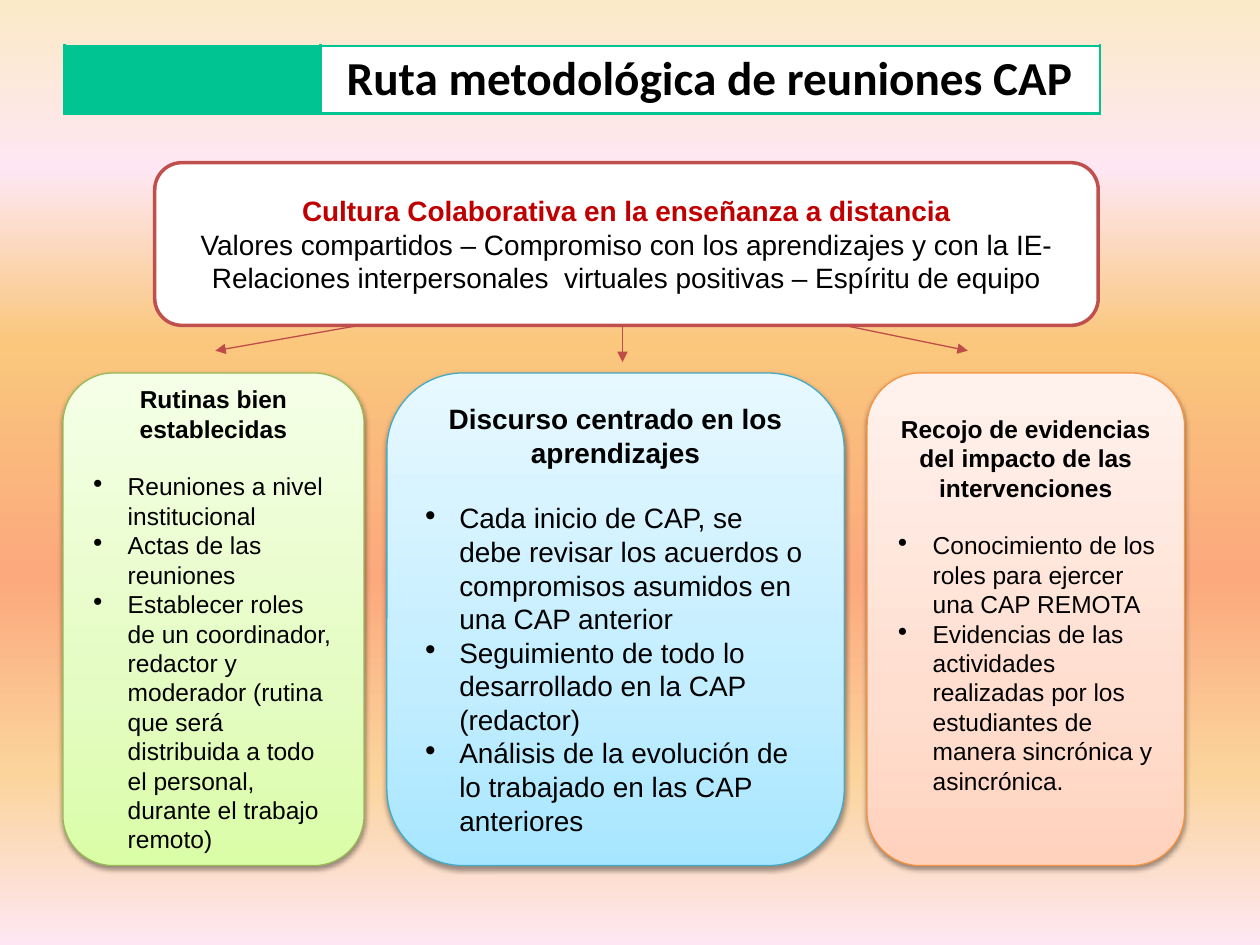
import lxml.etree
import pptx
import pptx.dml.color
import pptx.enum.shapes
import pptx.enum.text
import pptx.oxml.ns
import pptx.util

Cm, Pt = pptx.util.Cm, pptx.util.Pt
qn = pptx.oxml.ns.qn
Align = pptx.enum.text.PP_ALIGN
Middle = pptx.enum.text.MSO_ANCHOR.MIDDLE

COLORS = {
    "black": "000000", "white": "FFFFFF", "title": "00C491",
    "banner_line": "C0504D", "banner_text": "C00000", "arrow": "BF4C48",
}
BACKGROUND = [(0, "FBEAC7"), (18, "FEE7F2"), (36, "FAC77D"),
              (61, "FBA97D"), (82, "FBD49C"), (100, "FEE7F2")]
CARD_TOP, CARD_HEIGHT = 7.52, 9.93
CARDS = [
    {"left": 1.27, "width": 6.07, "size": 14, "line": "98B955",
     "stops": [(0, "DAFDA7"), (35, "E4FCC2"), (100, "F5FFE7")],
     "heading": "Rutinas bien establecidas",
     "items": ["Reuniones a nivel institucional", "Actas de las reuniones",
               "Establecer roles de un coordinador, redactor y moderador (rutina que será "
               "distribuida a todo el personal, durante el trabajo remoto)"]},
    {"left": 7.8, "width": 9.22, "size": 16, "line": "46AAC5",
     "stops": [(0, "A7E6FF"), (35, "C1EDFF"), (100, "E7F8FF")],
     "heading": "Discurso centrado en los aprendizajes",
     "items": ["Cada inicio de CAP, se debe revisar los acuerdos o compromisos asumidos "
               "en una CAP anterior",
               "Seguimiento de todo lo desarrollado en la CAP (redactor)",
               "Análisis de la evolución de lo trabajado en las CAP anteriores"]},
    {"left": 17.48, "width": 6.4, "size": 14, "line": "F69240", "bottom": 0.72,
     "stops": [(0, "FFD2BD"), (35, "FFDED0"), (100, "FFF2ED")],
     "heading": "Recojo de evidencias del impacto de las intervenciones",
     "items": ["Conocimiento de los roles para ejercer una CAP REMOTA",
               "Evidencias de las actividades realizadas por los estudiantes de manera "
               "sincrónica y asincrónica."]},
]


def rgb(value):
    return pptx.dml.color.RGBColor.from_string(value)


def add_element(parent, tag, **attributes):
    element = lxml.etree.SubElement(parent, qn(tag))
    for name, value in attributes.items():
        element.set(name, str(value))
    return element


def set_gradient(fill, owner, stops, angle):
    """Angle runs clockwise in degrees."""
    fill.gradient()
    gradient = owner.find(".//" + qn("a:gradFill"))
    stop_list = gradient.find(qn("a:gsLst"))
    for stop in list(stop_list):
        stop_list.remove(stop)
    for position, color in stops:
        stop = add_element(stop_list, "a:gs", pos=position * 1000)
        add_element(stop, "a:srgbClr", val=color)
    gradient.find(qn("a:lin")).set("ang", str(angle * 60000))


def add_run(paragraph, text, size, color=COLORS["black"], bold=False, font="Arial"):
    run = paragraph.add_run()
    run.text = text
    run.font.name, run.font.size, run.font.bold = font, Pt(size), bold
    run.font.color.rgb = rgb(color)


def add_round_box(slide, left, top, width, height, line_color, line_width):
    shape = slide.shapes.add_shape(pptx.enum.shapes.MSO_SHAPE.ROUNDED_RECTANGLE,
                                   Cm(left), Cm(top), Cm(width), Cm(height))
    shape.shadow.inherit = False
    shape.line.color.rgb = rgb(line_color)
    shape.line.width = Pt(line_width)
    shape.text_frame.word_wrap = True
    shape.text_frame.vertical_anchor = Middle
    return shape


def add_title(slide, left, top, label_width, title_width, height):
    table = slide.shapes.add_table(1, 2, Cm(left), Cm(top), Cm(label_width + title_width),
                                   Cm(height)).table
    table.first_row = table.horz_banding = False
    columns = [(label_width, COLORS["title"]), (title_width, COLORS["white"])]
    for index, (width, color) in enumerate(columns):
        table.columns[index].width = Cm(width)
        cell = table.cell(0, index)
        properties = cell._tc.get_or_add_tcPr()
        for side in ("a:lnL", "a:lnR", "a:lnT", "a:lnB"):
            border = add_element(properties, side, w=Pt(1.5))
            add_element(add_element(border, "a:solidFill"), "a:srgbClr", val=COLORS["title"])
        cell.fill.solid()
        cell.fill.fore_color.rgb = rgb(color)
        cell.vertical_anchor = Middle
        cell.margin_top = cell.margin_bottom = 0
        cell.margin_left, cell.margin_right = Cm(0.53), Cm(0.15)
    add_run(table.cell(0, 1).text_frame.paragraphs[0], "Ruta metodológica de reuniones CAP",
            27, bold=True, font="Calibri")


def add_banner(slide, left, top, width, height):
    shape = add_round_box(slide, left, top, width, height, COLORS["banner_line"], 2)
    shape.fill.solid()
    shape.fill.fore_color.rgb = rgb(COLORS["white"])
    frame = shape.text_frame
    paragraph = frame.paragraphs[0]
    paragraph.alignment = Align.CENTER
    add_run(paragraph, "Cultura Colaborativa en la enseñanza a distancia", 16,
            COLORS["banner_text"], True)
    for text in ("Valores compartidos – Compromiso con los aprendizajes y con la IE-",
                 "Relaciones interpersonales  virtuales positivas – Espíritu de equipo"):
        paragraph = frame.add_paragraph()
        paragraph.alignment = Align.CENTER
        add_run(paragraph, text, 16)


def add_arrows(slide, left, top):
    # Start x, end x and drop, measured from the banner's lower left corner
    for start, end, drop in ((4.12, 1.22, 0.51), (9.43, 9.43, 0.74), (13.9, 16.39, 0.51)):
        arrow = slide.shapes.add_connector(
            pptx.enum.shapes.MSO_CONNECTOR.STRAIGHT,
            Cm(left + start), Cm(top), Cm(left + end), Cm(top + drop))
        arrow.line.color.rgb = rgb(COLORS["arrow"])
        arrow.line.width = Pt(0.75)
        add_element(arrow.line._get_or_add_ln(), "a:tailEnd", type="triangle")
        add_element(arrow._element.spPr, "a:effectLst")


def add_card(slide, card, top, height):
    shape = add_round_box(slide, card["left"], top, card["width"], height, card["line"], 0.75)
    set_gradient(shape.fill, shape._element.spPr, card["stops"], 270)
    # Soft shadow below the card
    effects = shape._element.spPr.find(qn("a:effectLst"))
    shadow = add_element(effects, "a:outerShdw", blurRad=Pt(3.1), dist=Pt(1.6),
                         dir=5400000, rotWithShape=0)
    add_element(add_element(shadow, "a:srgbClr", val=COLORS["black"]), "a:alpha", val=38000)
    # Heading, then one empty line's worth of space
    frame = shape.text_frame
    frame.margin_bottom = Cm(card.get("bottom", 0.13))
    heading = frame.paragraphs[0]
    heading.alignment = Align.CENTER
    heading.space_after = Pt(card["size"] * 1.15)
    add_run(heading, card["heading"], card["size"], bold=True)
    # Bulleted items
    for item in card["items"]:
        paragraph = frame.add_paragraph()
        paragraph.alignment = Align.LEFT
        properties = paragraph._p.get_or_add_pPr()
        properties.set("marL", str(Cm(0.76)))
        properties.set("indent", str(-Cm(0.76)))
        add_element(add_element(properties, "a:buClr"), "a:srgbClr", val=COLORS["black"])
        add_element(properties, "a:buChar", char="∙")
        add_run(paragraph, item, card["size"])


def main():
    presentation = pptx.Presentation()
    presentation.slide_width, presentation.slide_height = Cm(25.4), Cm(19.05)
    slide = presentation.slides.add_slide(presentation.slide_layouts[6])
    set_gradient(slide.background.fill, slide._element, BACKGROUND, 90)
    add_title(slide, 1.3, 0.92, 5.16, 15.72, 1.37)
    add_banner(slide, 3.12, 3.28, 19.02, 3.28)
    add_arrows(slide, 3.12, 6.56)
    for card in CARDS:
        add_card(slide, card, CARD_TOP, CARD_HEIGHT)
    presentation.save("out.pptx")


if __name__ == "__main__":
    main()
